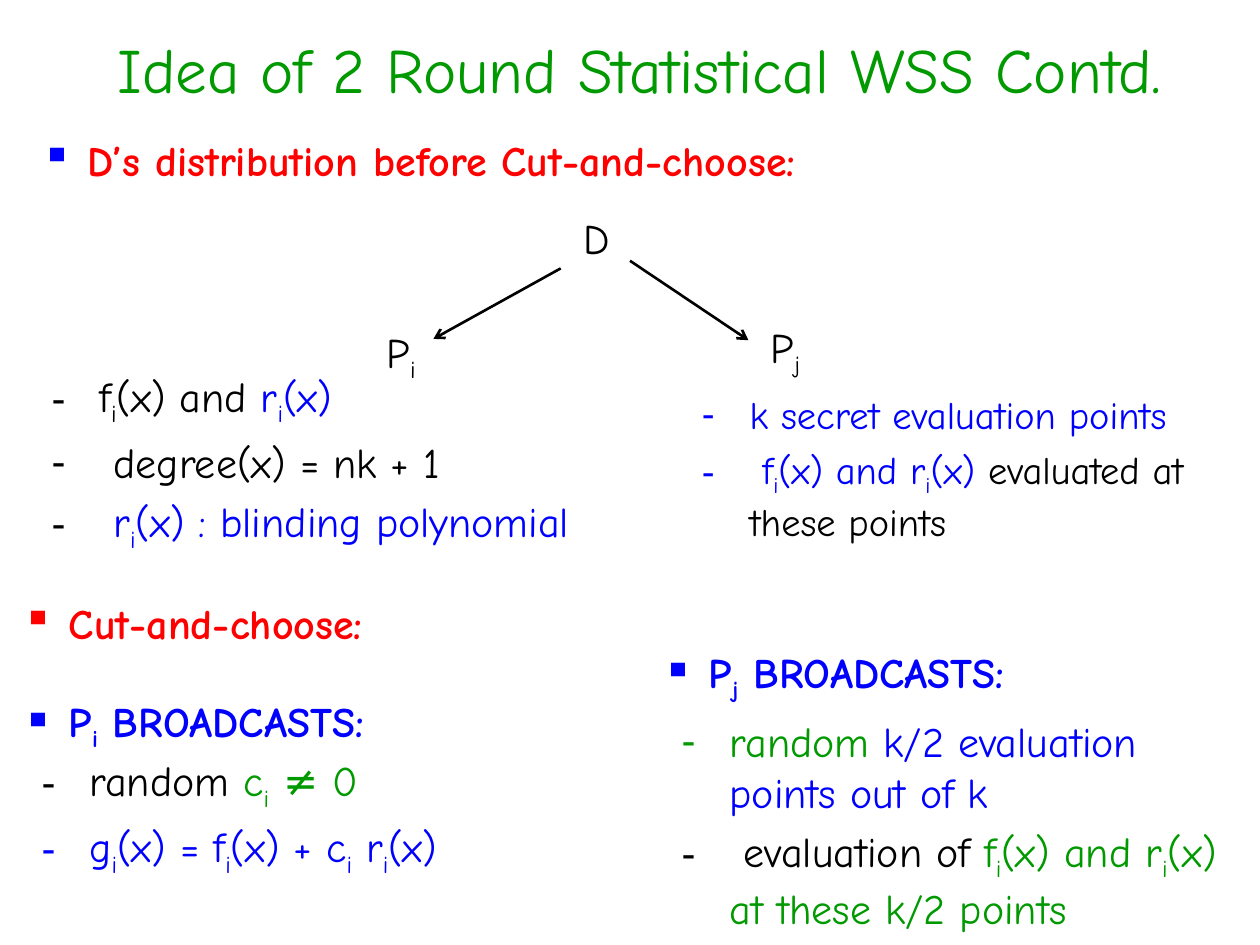
"""Build a slide on the distribution and cut-and-choose steps of statistical WSS."""
import pptx
import pptx.dml.color
import pptx.enum.shapes
import pptx.enum.text
import pptx.oxml.ns
import pptx.util
from lxml import etree

Inches = pptx.util.Inches
Pt = pptx.util.Pt
RGBColor = pptx.dml.color.RGBColor

FONT = "Comic Neue"
BLACK = RGBColor(0x00, 0x00, 0x00)
BLUE = RGBColor(0x00, 0x00, 0xFF)
GREEN = RGBColor(0x00, 0x99, 0x00)
RED = RGBColor(0xFF, 0x00, 0x00)


def add_child(parent, tag, **attributes):
    """Append a DrawingML element to the parent."""
    return etree.SubElement(parent, pptx.oxml.ns.qn(tag), **attributes)


def set_bullet(p, char, indent):
    """Give a paragraph a hanging bullet."""
    pPr = p._p.get_or_add_pPr()
    pPr.set("marL", str(Inches(indent)))
    pPr.set("indent", str(-Inches(indent)))
    add_child(pPr, "a:buChar", char=char)


def add_run(p, text, color, subscript=False):
    """Add one coloured run, lowered when it is a subscript."""
    r = p.add_run()
    r.text = text
    r.font.color.rgb = color
    if subscript:
        r.font._element.set("baseline", "-25000")


def write(p, parts, size=24, bold=False):
    """Write (text, colour) parts; an underscore lowers the next letter."""
    for text, color in parts:
        first, *rest = text.split("_")
        if first:
            add_run(p, first, color)
        for piece in rest:
            add_run(p, piece[0], color, subscript=True)
            if piece[1:]:
                add_run(p, piece[1:], color)
    for font in [p.font] + [r.font for r in p.runs]:
        font.name = FONT
        font.size = Pt(size)
        font.bold = bold


def place(sp, box):
    """Move a shape to a box of left, top, width and height in inches."""
    sp.left, sp.top, sp.width, sp.height = (Inches(v) for v in box)


def add_text(s, box):
    """Add a wrapping text box and return its first paragraph."""
    tf = s.shapes.add_textbox(*(Inches(v) for v in box)).text_frame
    tf.word_wrap = True
    return tf.paragraphs[0]


def fill_title(s, box, text):
    """Format the title placeholder."""
    sp = s.shapes.title
    place(sp, box)
    tf = sp.text_frame
    tf.vertical_anchor = pptx.enum.text.MSO_ANCHOR.MIDDLE
    p = tf.paragraphs[0]
    p.alignment = pptx.enum.text.PP_ALIGN.CENTER
    write(p, [(text, GREEN)], size=36)


def add_heading(s, box, parts):
    """Add a bold heading with a square bullet."""
    p = add_text(s, box)
    set_bullet(p, "▪", 0.25)
    write(p, parts, bold=True)


def fill_list(sp, box, items, size=24):
    """Fill a body placeholder with dashed items."""
    place(sp, box)
    tf = sp.text_frame
    tf.auto_size = pptx.enum.text.MSO_AUTO_SIZE.NONE
    tf.vertical_anchor = pptx.enum.text.MSO_ANCHOR.TOP
    for i, parts in enumerate(items):
        p = tf.add_paragraph() if i else tf.paragraphs[0]
        p.space_before = Pt(5)
        set_bullet(p, "-", 0.38)
        write(p, parts, size)


def add_arrow(s, start, end):
    """Draw a black arrow between two points in inches."""
    c = s.shapes.add_connector(
        pptx.enum.shapes.MSO_CONNECTOR.STRAIGHT,
        *(Inches(v) for v in start + end))
    c.line.color.rgb = BLACK
    c.line.width = Pt(1.5)
    add_child(c.line._get_or_add_ln(), "a:tailEnd", type="arrow")
    add_child(c._element.spPr, "a:effectLst")


def add_tree(s, box):
    """Draw the dealer D sending to the parties below."""
    x, y, w, h = box
    labels = [("D", 1.56, 0), ("P_i", 0, 0.9), ("P_j", w - 0.47, 0.86)]
    for text, dx, dy in labels:
        p = add_text(s, (x + dx, y + dy, 0.47, h - 0.9))
        p.space_before = Pt(5)
        write(p, [(text, BLACK)])
    add_arrow(s, (x + 1.48, y + 0.49), (x + 0.47, y + 1.05))
    add_arrow(s, (x + 2.03, y + 0.43), (x + w - 0.55, y + 1.06))


def main():
    """Build and save the slide."""
    prs = pptx.Presentation()
    prs.slide_width, prs.slide_height = Inches(10), Inches(7.5)
    s = prs.slides.add_slide(prs.slide_layouts[4])
    body = s.placeholders

    fill_title(s, (0.16, 0, 10, 1.09), "Idea of 2 Round Statistical WSS Contd. ")
    add_tree(s, (2.97, 1.64, 3.52, 1.56))

    headings = [
        ((0.23, 1.02, 7.19, 0.5),
         [(" ", BLUE), ("D’s distribution before Cut-and-choose:", RED)]),
        ((0.08, 4.69, 3.44, 0.5), [(" Cut-and-choose:", RED)]),
        ((0.08, 5.47, 3.44, 0.5), [(" P_i BROADCASTS:", BLUE)]),
        ((5.16, 5.08, 3.44, 0.5), [(" P_j BROADCASTS:", BLUE)]),
    ]
    for box, parts in headings:
        add_heading(s, box, parts)

    fill_list(body[1], (0.31, 2.89, 4.61, 1.48), [
        [("f_i(x) and ", BLACK), ("r_i(x)", BLUE)],
        [(" degree(x) = nk + 1", BLACK)],
        [(" ", BLACK), ("r_i(x) : blinding polynomial", BLUE)],
    ])
    fill_list(body[3], (5.47, 3.05, 4.45, 1.3), [
        [("k secret evaluation points", BLUE)],
        [(" f_i(x) and r_i(x) ", BLUE), ("evaluated at these points", BLACK)],
    ], size=22)
    fill_list(body[2], (0.23, 5.94, 4.61, 1.09), [
        [("random ", BLACK), ("c_i ≠ 0", GREEN)],
        [("g_i(x) = f_i(x) + c_i r_i(x)", BLUE)],
    ])
    fill_list(body[4], (5.31, 5.63, 4.61, 1.8), [
        [("random ", GREEN), ("k/2 evaluation points out of k", BLUE)],
        [(" evaluation of ", BLACK),
         ("f_i(x) and r_i(x) at these k/2 points", GREEN)],
    ])
    prs.save("out.pptx")


if __name__ == "__main__":
    main()
